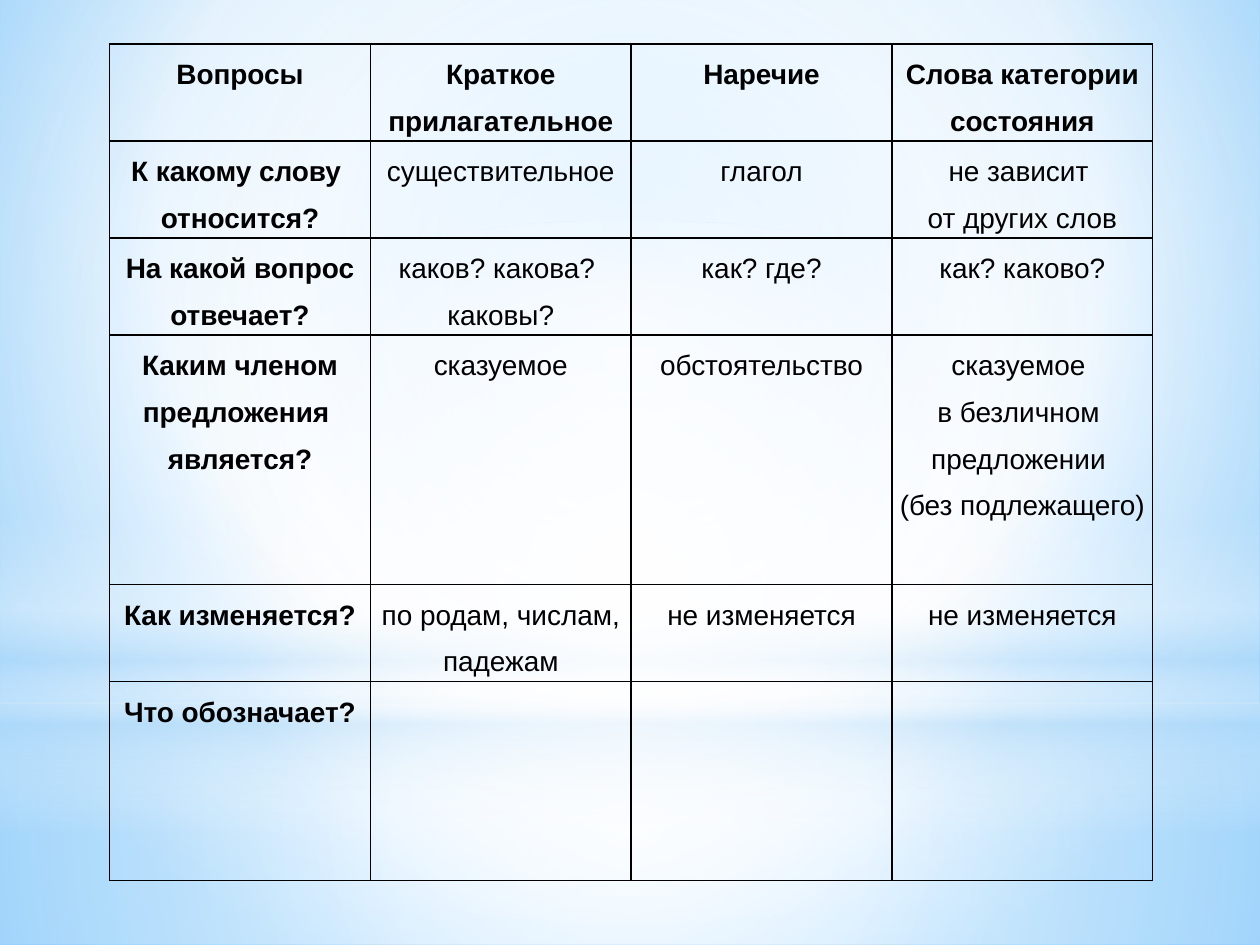
"""Build a slide with a table comparing short adjectives, adverbs and state words."""
from pptx import Presentation, dml, oxml, util as u
from pptx.dml import color
from pptx.enum import shapes, text

ROWS = [
    (0.77, ["Вопросы", "Краткое\nприлагательное", "Наречие", "Слова категории состояния"]),
    (0.77, ["К какому слову \nотносится?", "существительное", "глагол",
            "не зависит \nот других слов"]),
    (0.77, ["На какой вопрос отвечает?", "каков? какова? \nкаковы?", "как? где?",
            "как? каково?"]),
    (1.98, ["Каким членом предложения \nявляется?", "сказуемое", "обстоятельство",
            "сказуемое \nв безличном \nпредложении \n(без подлежащего)"]),
    (0.77, ["Как изменяется?", "по родам, числам, падежам", "не изменяется", "не изменяется"]),
    (1.58, ["Что обозначает?", "", "", ""]),
]
COLUMN_WIDTH = 2.07
TABLE_LEFT, TABLE_TOP = 0.87, 0.35

CENTER = (50, 50, 50, 50)
BACKGROUND = [(0, "9ED5FF", 100), (60, "FFFFFF", 100), (100, "5BB9FF", 100)]
RECTANGLE, OVAL = shapes.MSO_SHAPE.RECTANGLE, shapes.MSO_SHAPE.OVAL
GLOWS = [
    (RECTANGLE, 5.58, 1.92, CENTER,
     [(0, "FFFFFF", 91), (37, "FFFFFF", 76), (100, "B4DCFA", 79)]),
    (RECTANGLE, 0, 5.58, CENTER,
     [(0, "FFFFFF", 89), (48, "FFFFFF", 62), (100, "B4DCFA", 79)]),
    (RECTANGLE, 4.12, 2.5, None,
     [(0, "FFFFFF", 0), (29, "FFFFFF", 30), (45, "B4DCFA", 40),
      (55, "FFFFFF", 26), (65, "B4DCFA", 60), (100, "FFFFFF", 0)]),
    (OVAL, 1.75, 5.58, CENTER, [(0, "FFFFFF", 100), (56, "FFFFFF", 0)]),
]
NAMESPACE = 'xmlns:a="http://schemas.openxmlformats.org/drawingml/2006/main"'


def rgb(value):
    return color.RGBColor.from_string(value)


def set_gradient(owner, fill, stops, focus):
    fill.solid()
    fill.fore_color.rgb = rgb("FFFFFF")
    stop_xml = "".join(
        f'<a:gs pos="{position * 1000}"><a:srgbClr val="{value}">'
        f'<a:alpha val="{opacity * 1000}"/></a:srgbClr></a:gs>'
        for position, value, opacity in stops)
    if focus:
        sides = " ".join(f'{side}="{part * 1000}"' for side, part in zip("ltrb", focus))
        direction = f'<a:path path="circle"><a:fillToRect {sides}/></a:path>'
    else:
        direction = '<a:lin ang="5400000" scaled="0"/>'
    gradient = oxml.parse_xml(
        f'<a:gradFill {NAMESPACE} rotWithShape="1"><a:gsLst>{stop_xml}</a:gsLst>'
        f'{direction}</a:gradFill>')
    solid = owner.xpath(".//a:solidFill")[0]
    solid.getparent().replace(solid, gradient)


def add_glow(slide, kind, top, height, focus, stops):
    shape = slide.shapes.add_shape(
        kind, 0, u.Inches(top), u.Inches(10), u.Inches(height))
    shape.shadow.inherit = False
    shape.line.fill.background()
    set_gradient(shape.element, shape.fill, stops, focus)


def add_borders(cell):
    properties = cell._tc.get_or_add_tcPr()
    for index, side in enumerate("LRTB"):
        properties.insert(index, oxml.parse_xml(
            f'<a:ln{side} {NAMESPACE} w="12700"><a:solidFill><a:srgbClr val="000000"/>'
            f'</a:solidFill></a:ln{side}>'))


def fill_cell(cell, content, bold):
    cell.margin_left = cell.margin_right = u.Inches(0.06)
    cell.margin_top = cell.margin_bottom = 0
    cell.fill.background()
    add_borders(cell)
    cell.text = content
    for paragraph in cell.text_frame.paragraphs:
        paragraph.alignment = text.PP_ALIGN.CENTER
        paragraph.line_spacing = 1.5
        font = paragraph.font
        font.name, font.size, font.bold = "Arial", u.Pt(16), bold
        font.color.rgb = rgb("000000")


def add_comparison(slide):
    column_count = len(ROWS[0][1])
    table = slide.shapes.add_table(
        len(ROWS), column_count, u.Inches(TABLE_LEFT), u.Inches(TABLE_TOP),
        u.Inches(COLUMN_WIDTH * column_count),
        u.Inches(sum(height for height, _ in ROWS))).table
    table.first_row = table.horz_banding = False
    for column in table.columns:
        column.width = u.Inches(COLUMN_WIDTH)
    for row_index, (height, contents) in enumerate(ROWS):
        table.rows[row_index].height = u.Inches(height)
        for column_index, content in enumerate(contents):
            fill_cell(table.cell(row_index, column_index), content,
                      row_index == 0 or column_index == 0)


def main():
    presentation = Presentation()
    presentation.slide_width, presentation.slide_height = u.Inches(10), u.Inches(7.5)
    slide = presentation.slides.add_slide(presentation.slide_layouts[6])
    set_gradient(slide.element, slide.background.fill, BACKGROUND, (20, 10, 20, 60))
    for glow in GLOWS:
        add_glow(slide, *glow)
    add_comparison(slide)
    presentation.save("out.pptx")


if __name__ == "__main__":
    main()
